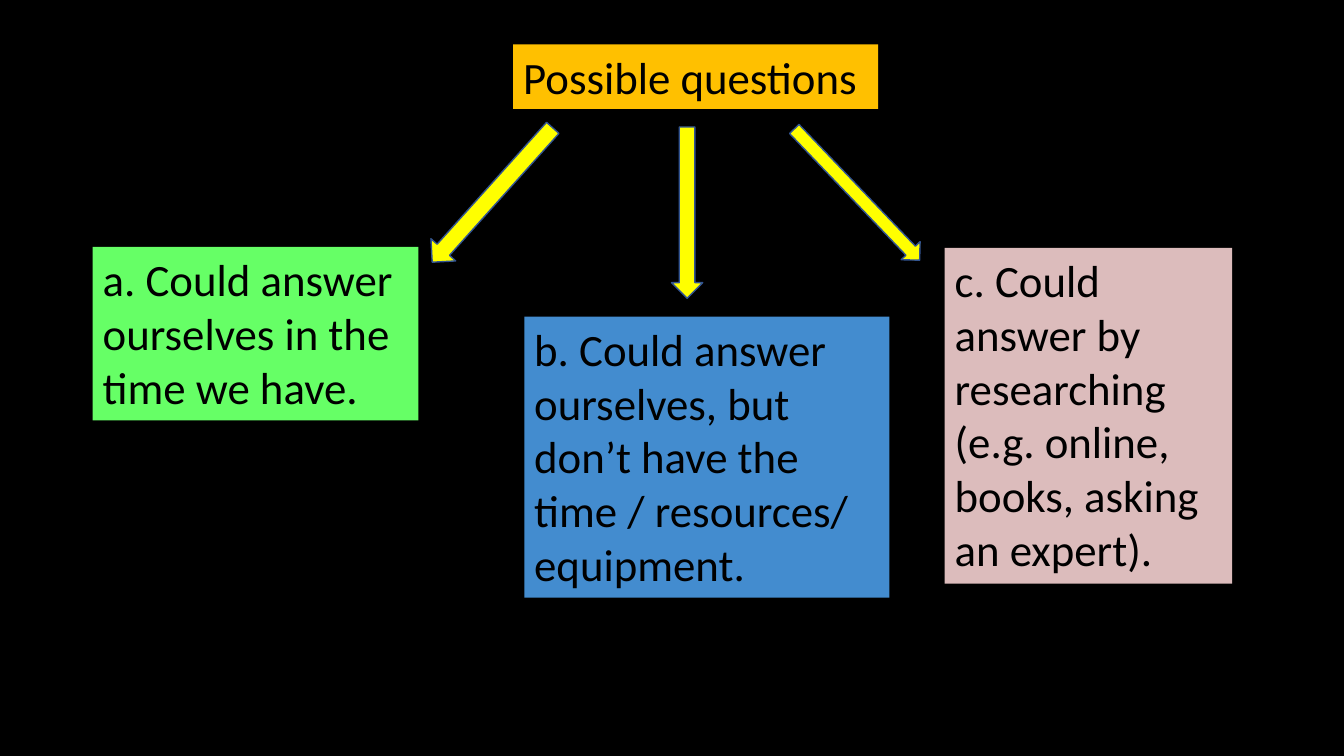
from pptx import Presentation
from pptx.dml.color import RGBColor
from pptx.enum.shapes import MSO_SHAPE
from pptx.enum.text import MSO_AUTO_SIZE
from pptx.util import Inches, Pt


def set_fill(fill, color):
    fill.solid()
    fill.fore_color.rgb = RGBColor.from_string(color)


presentation = Presentation()
presentation.slide_width = Inches(13.33)
presentation.slide_height = Inches(7.5)
slide = presentation.slides.add_slide(presentation.slide_layouts[6])
set_fill(slide.background.fill, "000000")

boxes = [
    (0.92, 2.45, 3.23, 1.72, "66FF66", "a. Could answer ourselves in the time we have."),
    (5.2, 3.14, 3.62, 2.79, "438CCF",
     "b. Could answer ourselves, but don’t have the time / resources/ equipment."),
    (9.37, 2.46, 2.85, 3.33, "DCBCBC",
     "c. Could answer by researching (e.g. online, books, asking an expert)."),
    (5.09, 0.44, 3.62, 0.64, "FFC000", "Possible questions"),
]
for left, top, width, height, color, text in boxes:
    box = slide.shapes.add_textbox(Inches(left), Inches(top), Inches(width), Inches(height))
    set_fill(box.fill, color)
    box.text_frame.word_wrap = True
    box.text_frame.auto_size = MSO_AUTO_SIZE.SHAPE_TO_FIT_TEXT
    run = box.text_frame.paragraphs[0].add_run()
    run.text = text
    run.font.name = "Calibri"
    run.font.size = Pt(32)
    set_fill(run.font.fill, "000000")

arrows = [
    (4.72, 1.04, 0.33, 1.79, 41.9),
    (6.66, 1.26, 0.31, 1.7, 0),
    (8.37, 1.03, 0.26, 1.8, 316.3),
]
for left, top, width, height, rotation in arrows:
    arrow = slide.shapes.add_shape(
        MSO_SHAPE.DOWN_ARROW, Inches(left), Inches(top), Inches(width), Inches(height))
    arrow.rotation = rotation
    arrow.shadow.inherit = False
    set_fill(arrow.fill, "FFFF00")
    set_fill(arrow.line.fill, "325491")
    arrow.line.width = Pt(1)

presentation.save("out.pptx")
